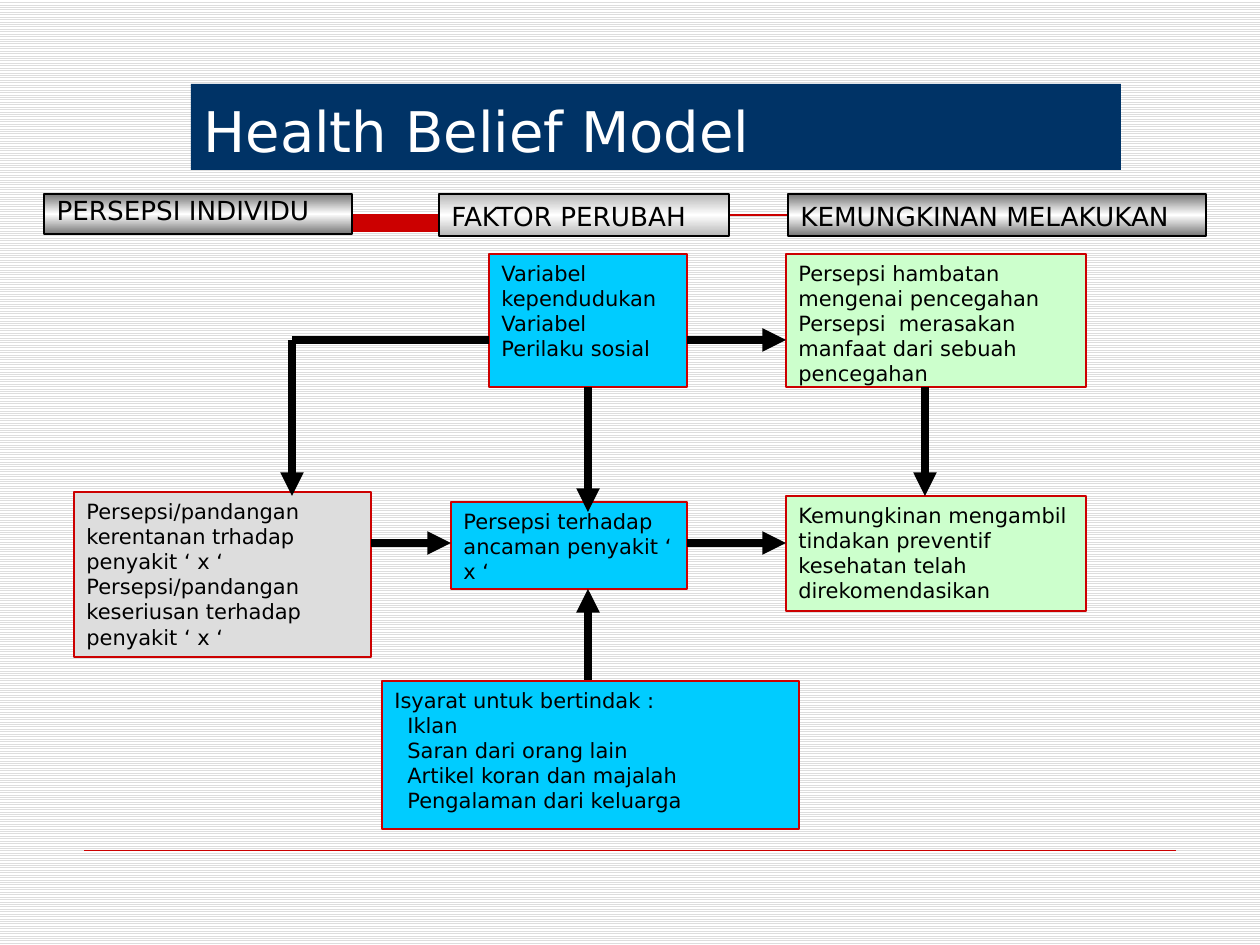
from copy import deepcopy

from lxml import etree
from pptx import Presentation
from pptx import util as u
from pptx.dml.color import RGBColor
from pptx.enum import dml, shapes, text
from pptx.oxml.ns import qn

PX = 914400 / 126
FONT = "DejaVu Sans"
BLACK = RGBColor(0x00, 0x00, 0x00)
WHITE = RGBColor(0xFF, 0xFF, 0xFF)
NAVY = RGBColor(0x00, 0x33, 0x66)
RED = RGBColor(0xCC, 0x00, 0x00)
CYAN = RGBColor(0x00, 0xCC, 0xFF)
MINT = RGBColor(0xCC, 0xFF, 0xCC)
SILVER = RGBColor(0xDD, 0xDD, 0xDD)
DARK_EDGE = RGBColor(0x76, 0x76, 0x76)
LIGHT_EDGE = RGBColor(0xB6, 0xB6, 0xB6)


def px(n):
    return u.Emu(round(n * PX))


def place(part, box):
    for side, n in zip(("left", "top", "width", "height"), box):
        setattr(part, side, px(n))


def paint(part, color):
    part.fill.solid()
    part.fill.fore_color.rgb = color


def outline(line, color, points):
    line.color.rgb = color
    line.width = u.Pt(points)


def write(part, lines, size, color=BLACK, anchor=text.MSO_ANCHOR.TOP):
    frame = part.text_frame
    frame.text = "\n".join(lines)
    frame_format = {"word_wrap": True, "vertical_anchor": anchor,
                    "auto_size": text.MSO_AUTO_SIZE.NONE}
    for key, value in frame_format.items():
        setattr(frame, key, value)
    for paragraph in frame.paragraphs:
        paragraph.alignment = text.PP_ALIGN.LEFT
        paragraph.space_before = u.Pt(0)
        for key, value in {"name": FONT, "size": u.Pt(size)}.items():
            setattr(paragraph.font, key, value)
        paragraph.font.color.rgb = color


def indent(paragraph, left, first=0):
    properties = paragraph._p.get_or_add_pPr()
    properties.set("marL", str(px(left)))
    properties.set("indent", str(px(first)))
    return properties


def add_box(slide, box):
    part = slide.shapes.add_shape(shapes.MSO_SHAPE.RECTANGLE, *map(px, box))
    part.shadow.inherit = False
    return part


def add_line(slide, ends, color, points, arrow=False):
    link = slide.shapes.add_connector(shapes.MSO_CONNECTOR.STRAIGHT, *map(px, ends))
    outline(link.line, color, points)
    if arrow:
        etree.SubElement(link.line._get_or_add_ln(), qn("a:tailEnd"), type="triangle")
    etree.SubElement(link.element.spPr, qn("a:effectLst"))


def add_backdrop(slide):
    fill = slide.background.fill
    fill.patterned()
    fill.pattern = dml.MSO_PATTERN.LIGHT_HORIZONTAL
    fill.fore_color.rgb = SILVER
    fill.back_color.rgb = WHITE

    left, top, middle, right, bottom = 84, 215, 726, 1181, 231
    builder = slide.shapes.build_freeform(left, top, scale=PX)
    builder.add_line_segments([(middle, top), (middle, bottom), (left, bottom)], close=True)
    builder.move_to(left, top)
    builder.add_line_segments([(right, top)], close=False)
    rule = builder.convert_to_shape()
    rule.shadow.inherit = False
    paint(rule, RED)
    outline(rule.line, RED, 0.75)
    add_line(slide, (84, 850, 1176, 850), RED, 0.25)


def add_factor(slide, box, color, lines, indented=()):
    factor = add_box(slide, box)
    paint(factor, color)
    outline(factor.line, RED, 0.75)
    write(factor, [*lines, *indented], 12)
    for paragraph in factor.text_frame.paragraphs[len(lines):]:
        indent(paragraph, 13)


def add_diagram(slide):
    factors = [
        ((489, 254, 198, 133), CYAN,
         ["Variabel kependudukan", "Variabel", "Perilaku sosial"]),
        ((786, 254, 300, 133), MINT,
         ["Persepsi hambatan mengenai pencegahan",
          "Persepsi  merasakan manfaat dari sebuah pencegahan"]),
        ((451, 502, 236, 87), CYAN, ["Persepsi terhadap ancaman penyakit ‘ x ‘"]),
        ((74, 492, 297, 165), SILVER,
         ["Persepsi/pandangan kerentanan trhadap penyakit ‘ x ‘",
          "Persepsi/pandangan keseriusan terhadap penyakit ‘ x ‘"]),
        ((786, 496, 300, 115), MINT,
         ["Kemungkinan mengambil tindakan preventif kesehatan telah direkomendasikan"]),
    ]
    for box, color, lines in factors:
        add_factor(slide, box, color, lines)

    upper, lower, bend, center = 340, 543, 292, 588
    add_line(slide, (bend, upper, 489, upper), BLACK, 4.5)
    arrows = [
        (687, upper, 786, upper),
        (bend, upper, bend, 496),
        (371, lower, 451, lower),
        (687, lower, 786, lower),
        (center, 387, center, 512),
        (center, 683, center, 589),
        (925, 387, 925, 496),
    ]
    for ends in arrows:
        add_line(slide, ends, BLACK, 4.5, arrow=True)

    add_factor(slide, (382, 681, 417, 148), CYAN, ["Isyarat untuk bertindak :"],
               ["Iklan", "Saran dari orang lain", "Artikel koran dan majalah",
                "Pengalaman dari keluarga"])


def format_heading(heading, label, edge):
    heading.fill.gradient()
    heading.fill.gradient_angle = 270
    stops = heading.element.spPr.find(".//" + qn("a:gsLst"))
    stops.append(deepcopy(stops[0]))
    for stop, position, color in zip(heading.fill.gradient_stops, (0, 0.5, 1),
                                     (edge, WHITE, edge)):
        stop.position = position
        stop.color.rgb = color
    outline(heading.line, BLACK, 0.75)
    write(heading, [label], 15)


def add_headings(slide):
    individual = slide.placeholders[1]
    place(individual, (44, 194, 308, 40))
    format_heading(individual, "PERSEPSI INDIVIDU", DARK_EDGE)
    paragraph = individual.text_frame.paragraphs[0]
    paragraph.line_spacing = 0.8
    properties = indent(paragraph, 64, -64)
    bullet = etree.Element(qn("a:buNone"))
    properties.find(qn("a:spcBef")).addnext(bullet)
    individual.element.getparent().append(individual.element)

    for box, label, edge in [
        ((439, 194, 290, 42), "FAKTOR PERUBAH", LIGHT_EDGE),
        ((788, 194, 418, 42), "KEMUNGKINAN MELAKUKAN", DARK_EDGE),
    ]:
        format_heading(add_box(slide, box), label, edge)


def add_title(slide, box):
    title = slide.shapes.title
    place(title, box)
    paint(title, NAVY)
    write(title, ["Health Belief Model"], 32, WHITE, text.MSO_ANCHOR.BOTTOM)
    title.element.getparent().append(title.element)


def main():
    deck = Presentation()
    deck.slide_width, deck.slide_height = px(1260), px(945)
    slide = deck.slides.add_slide(deck.slide_layouts[1])
    add_backdrop(slide)
    add_diagram(slide)
    add_headings(slide)
    add_title(slide, (191, 84, 930, 86))
    deck.save("out.pptx")


if __name__ == "__main__":
    main()
